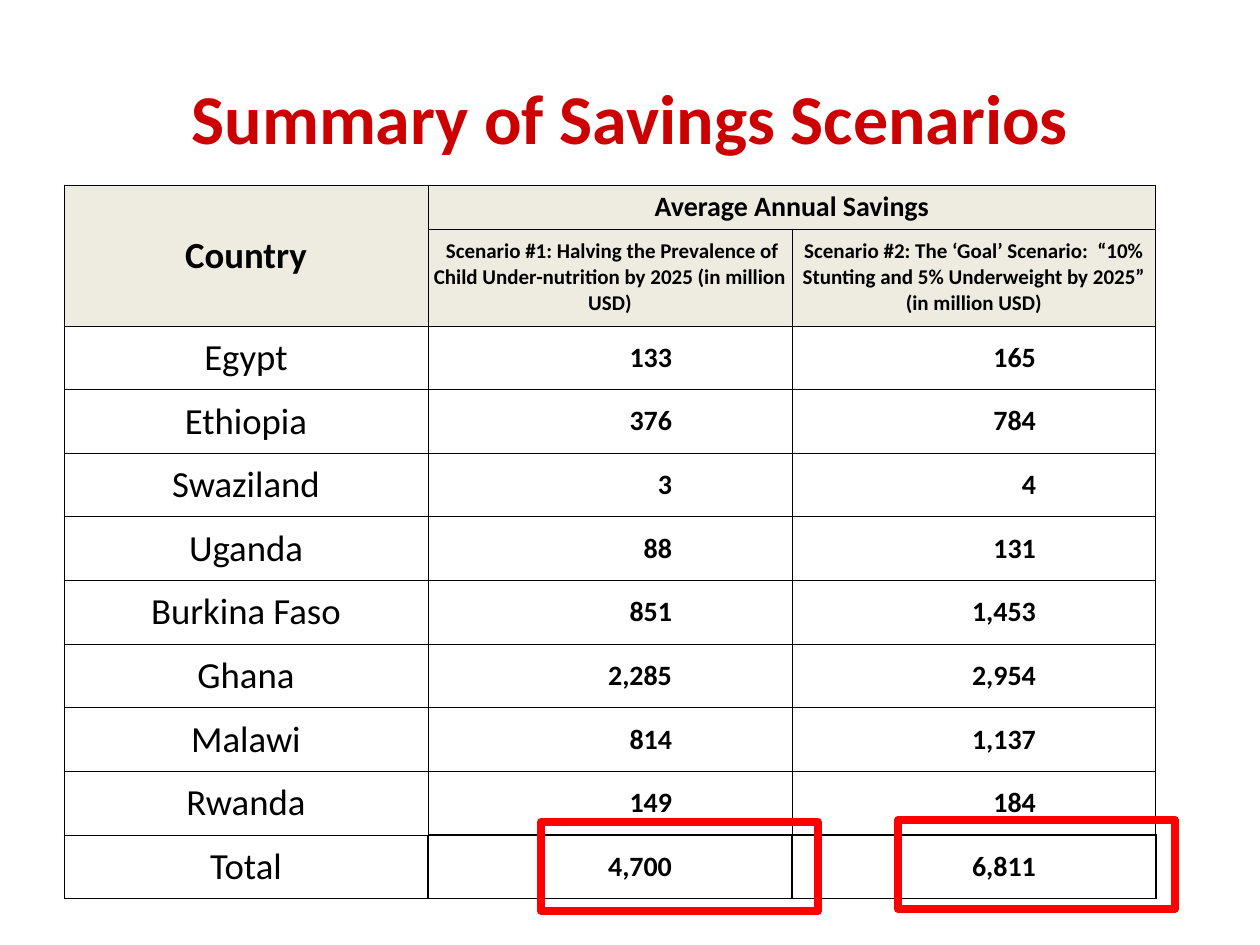
import pptx
import pptx.dml.color
import pptx.enum.shapes
import pptx.enum.text
import pptx.oxml
import pptx.oxml.ns
import pptx.util

TITLE = "Summary of Savings Scenarios"
HEADERS = [
    ("Country", "Average Annual Savings", ""),
    ("",
     " Scenario #1: Halving the Prevalence of Child Under-nutrition by 2025 (in million USD)",
     "Scenario #2: The ‘Goal’ Scenario:  “10% Stunting and 5% Underweight by 2025” (in million USD)"),
]
SAVINGS = [
    ("Egypt", "133", "165"),
    ("Ethiopia", "376", "784"),
    ("Swaziland", "3", "4"),
    ("Uganda", "88", "131"),
    ("Burkina Faso", "851", "1,453"),
    ("Ghana", "2,285", "2,954"),
    ("Malawi", "814", "1,137"),
    ("Rwanda", "149", "184"),
    ("Total", "4,700", "6,811"),
]
HIGHLIGHTS = [(541, 822), (898, 820)]  # left, top in px

FONT = "Calibri"
BLACK, BEIGE, DARK_RED, RED = "000000", "EEECE1", "CC0000", "FF0000"
TABLE_LEFT, TABLE_TOP, COLUMN_WIDTH = 64, 185, 364
HEADER_HEIGHTS = [44, 97]
BODY_HEIGHT = 573
NUMBER_MARGIN = 120
ALIGN = pptx.enum.text.PP_ALIGN
MIDDLE = pptx.enum.text.MSO_ANCHOR.MIDDLE


def px(value):
    return pptx.util.Emu(round(value * 914400 / 126))


def color(value):
    return pptx.dml.color.RGBColor.from_string(value)


def format_paragraph(paragraph, size, bold, hue, alignment):
    paragraph.alignment = alignment
    font = paragraph.font
    font.name, font.size, font.bold = FONT, pptx.util.Pt(size), bold
    font.color.rgb = color(hue)


def set_borders(cell, widths):
    properties = cell._tc.get_or_add_tcPr()
    for side in "LRTB":
        properties.append(pptx.oxml.parse_xml(
            f'<a:ln{side} {pptx.oxml.ns.nsdecls("a")} w="{pptx.util.Pt(widths[side])}">'
            f'<a:solidFill><a:srgbClr val="{BLACK}"/></a:solidFill></a:ln{side}>'))


def border_widths(row, column):
    """Thin lines, with heavier ones around the two totals."""
    widths = dict.fromkeys("LRTB", 0.5)
    if row == last_row and column > 0:
        widths = dict.fromkeys("LRTB", 1)
    elif row == last_row:
        widths["R"] = 1
    elif row == last_row - 1 and column > 0:
        widths["B"] = 1
    return widths


def text_style(row, column):
    """Size, bold and alignment of a cell's text."""
    if column == 0:
        return 21, row < len(HEADERS), ALIGN.CENTER
    if row < len(HEADERS):
        return (16, 12)[row], True, ALIGN.CENTER
    return 16, True, ALIGN.RIGHT


presentation = pptx.Presentation()
presentation.slide_width, presentation.slide_height = px(1260), px(945)
slide = presentation.slides.add_slide(presentation.slide_layouts[5])

# Title
title = slide.shapes.title
title.left, title.top, title.width, title.height = px(63), px(38), px(1134), px(158)
title.text_frame.text = TITLE
title.text_frame.vertical_anchor = MIDDLE
format_paragraph(title.text_frame.paragraphs[0], 40, True, DARK_RED, ALIGN.CENTER)

# Table grid
rows = HEADERS + SAVINGS
last_row = len(rows) - 1
heights = HEADER_HEIGHTS + [BODY_HEIGHT / len(SAVINGS)] * len(SAVINGS)
table = slide.shapes.add_table(
    len(rows), 3, px(TABLE_LEFT), px(TABLE_TOP), px(3 * COLUMN_WIDTH), px(sum(heights))).table
table.first_row = table.horz_banding = False
for column in table.columns:
    column.width = px(COLUMN_WIDTH)
for row, height in zip(table.rows, heights):
    row.height = px(height)

# Table cells
for row_index, texts in enumerate(rows):
    for column_index, text in enumerate(texts):
        cell = table.cell(row_index, column_index)
        size, bold, alignment = text_style(row_index, column_index)
        cell.text = text
        format_paragraph(cell.text_frame.paragraphs[0], size, bold, BLACK, alignment)
        cell.vertical_anchor = MIDDLE
        cell.margin_left = cell.margin_top = cell.margin_bottom = 0
        cell.margin_right = px(NUMBER_MARGIN) if alignment == ALIGN.RIGHT else 0
        set_borders(cell, border_widths(row_index, column_index))
        if row_index < len(HEADERS):
            cell.fill.solid()
            cell.fill.fore_color.rgb = color(BEIGE)
        else:
            cell.fill.background()
table.cell(0, 0).merge(table.cell(1, 0))
table.cell(0, 1).merge(table.cell(0, 2))

# Red frames around the totals
for left, top in HIGHLIGHTS:
    frame = slide.shapes.add_shape(
        pptx.enum.shapes.MSO_SHAPE.RECTANGLE, px(left), px(top), px(277), px(89))
    frame.shadow.inherit = False
    frame.fill.background()
    frame.line.color.rgb = color(RED)
    frame.line.width = pptx.util.Pt(4.5)
    frame.line._get_or_add_ln().append(
        pptx.oxml.parse_xml(f'<a:round {pptx.oxml.ns.nsdecls("a")}/>'))

presentation.save("out.pptx")
